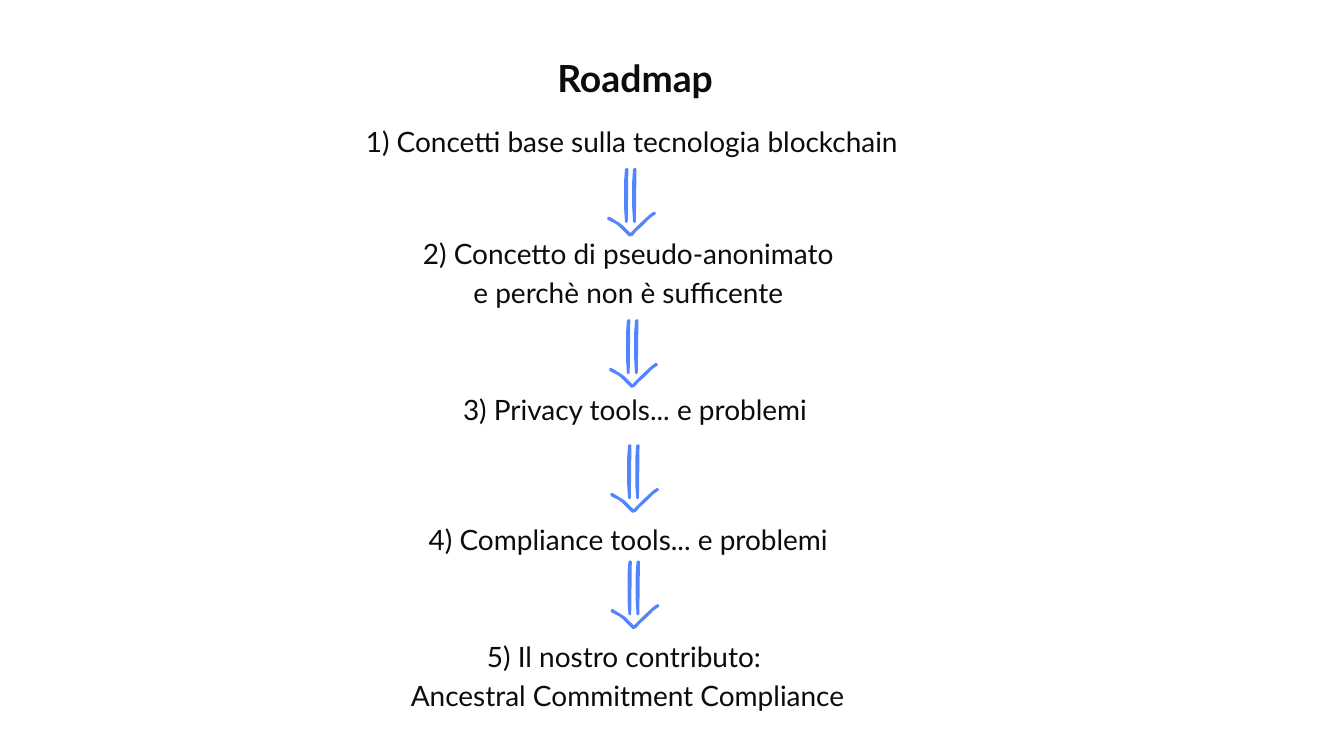
from dataclasses import dataclass

from pptx import Presentation
from pptx.dml.color import RGBColor
from pptx.enum.text import MSO_ANCHOR, MSO_AUTO_SIZE, PP_ALIGN
from pptx.util import Pt

CENTER = PP_ALIGN.CENTER
TOP = MSO_ANCHOR.TOP
GROW = MSO_AUTO_SIZE.SHAPE_TO_FIT_TEXT

TITLE_ONLY = 5
UNITS_PER_POINT = 10
BAR_GAP = 8.7

BAR = [(23, 1.4), (22.4, 57.6), (20.9, 59), (19.4, 57.6), (18.5, 43),
       (18.5, 14), (19.4, 1.4), (20.9, 0), (22.4, 0.3)]
LEFT_BARB = [(2.9, 52.3), (15.1, 59.8), (19.4, 63.8), (26.6, 71.3),
             (25.9, 73.4), (23.8, 73.4), (13, 62.6), (9.4, 59.8),
             (0.7, 55.4), (0.5, 53.3), (1.4, 52.3)]
RIGHT_BARB = [(25.2, 69.8), (36, 59), (46.1, 49.7), (50.4, 46.8),
              (51.8, 47.5), (52.6, 49), (51.8, 49.9), (46.8, 53.3),
              (38.2, 61.9), (32.4, 67), (27.4, 72.7), (25.2, 72),
              (24.5, 70.6)]
ARROW = [BAR, [(x + BAR_GAP, y) for x, y in BAR], LEFT_BARB, RIGHT_BARB]

STEPS = [
    (357.8, 127.4, 638.6, ["1) Concetti base sulla tecnologia blockchain"]),
    (319, 247, 708.5, ["2) Concetto di pseudo-anonimato",
                       "e perchè non è sufficente"]),
    (326.2, 414.7, 708.5, ["3) Privacy tools... e problemi"]),
    (319, 553.7, 708.5, ["4) Compliance tools... e problemi"]),
    (318.2, 679, 708.5, ["5) Il nostro contributo: ",
                         "Ancestral Commitment Compliance"]),
]
ARROW_ORIGINS = [(650.2, 180), (652.3, 342), (653.5, 476), (653.9, 600.5)]


@dataclass(frozen=True)
class Theme:
    """Colours and type sizes of the roadmap."""

    font: str = "Lato"
    ink: RGBColor = RGBColor(0x0C, 0x0C, 0x0C)
    accent: RGBColor = RGBColor(0x52, 0x84, 0xFF)
    paper: RGBColor = RGBColor(0xFF, 0xFF, 0xFF)
    title_size: int = 40
    title_leading: int = 56
    step_size: int = 30
    step_leading: int = 42


class Roadmap:
    """Draws the elements of a roadmap on one slide."""

    def __init__(self, slide, theme):
        self.s = slide
        self.theme = theme
        fill = slide.background.fill
        fill.solid()
        fill.fore_color.rgb = theme.paper

    def set_text(self, sp, lines, size, leading, bold=False):
        """Fill a shape with centred lines of text."""
        tf = sp.text_frame
        tf.text = "\n".join(lines)
        tf.word_wrap = True
        tf.auto_size = GROW
        tf.vertical_anchor = TOP
        tf.margin_left = tf.margin_top = tf.margin_right = tf.margin_bottom = 0
        for p in tf.paragraphs:
            p.alignment = CENTER
            p.line_spacing = Pt(leading)
            p.space_before = Pt(0)
            p.font.name = self.theme.font
            p.font.size = Pt(size)
            p.font.bold = bold
            p.font.color.rgb = self.theme.ink

    def title(self, text, left, top, width, height):
        """Place the slide title."""
        sp = self.s.shapes.title
        sp.left, sp.top, sp.width, sp.height = map(Pt, (left, top, width, height))
        self.set_text(sp, [text], self.theme.title_size,
                      self.theme.title_leading, bold=True)

    def step(self, left, top, width, lines):
        """Add one step of the roadmap."""
        leading = self.theme.step_leading
        sp = self.s.shapes.add_textbox(
            Pt(left), Pt(top), Pt(width), Pt(leading * len(lines)))
        self.set_text(sp, lines, self.theme.step_size, leading)

    def arrow(self, left, top):
        """Add a hand-drawn double arrow pointing down."""
        for stroke in ARROW:
            start, *rest = [(x * UNITS_PER_POINT, y * UNITS_PER_POINT)
                            for x, y in stroke]
            builder = self.s.shapes.build_freeform(
                *start, scale=Pt(1) / UNITS_PER_POINT)
            builder.add_line_segments(rest, close=True)
            sp = builder.convert_to_shape(Pt(left), Pt(top))
            sp.shadow.inherit = False
            sp.fill.solid()
            sp.fill.fore_color.rgb = self.theme.accent
            sp.line.fill.background()


def main():
    """Build and save the roadmap slide."""
    prs = Presentation()
    prs.slide_width, prs.slide_height = Pt(1440), Pt(810)
    slide = prs.slides.add_slide(prs.slide_layouts[TITLE_ONLY])
    roadmap = Roadmap(slide, Theme())
    roadmap.title("Roadmap", 54.7, 51, 1251.4, 53.3)
    for step in STEPS:
        roadmap.step(*step)
    for origin in ARROW_ORIGINS:
        roadmap.arrow(*origin)
    prs.save("out.pptx")


if __name__ == "__main__":
    main()
